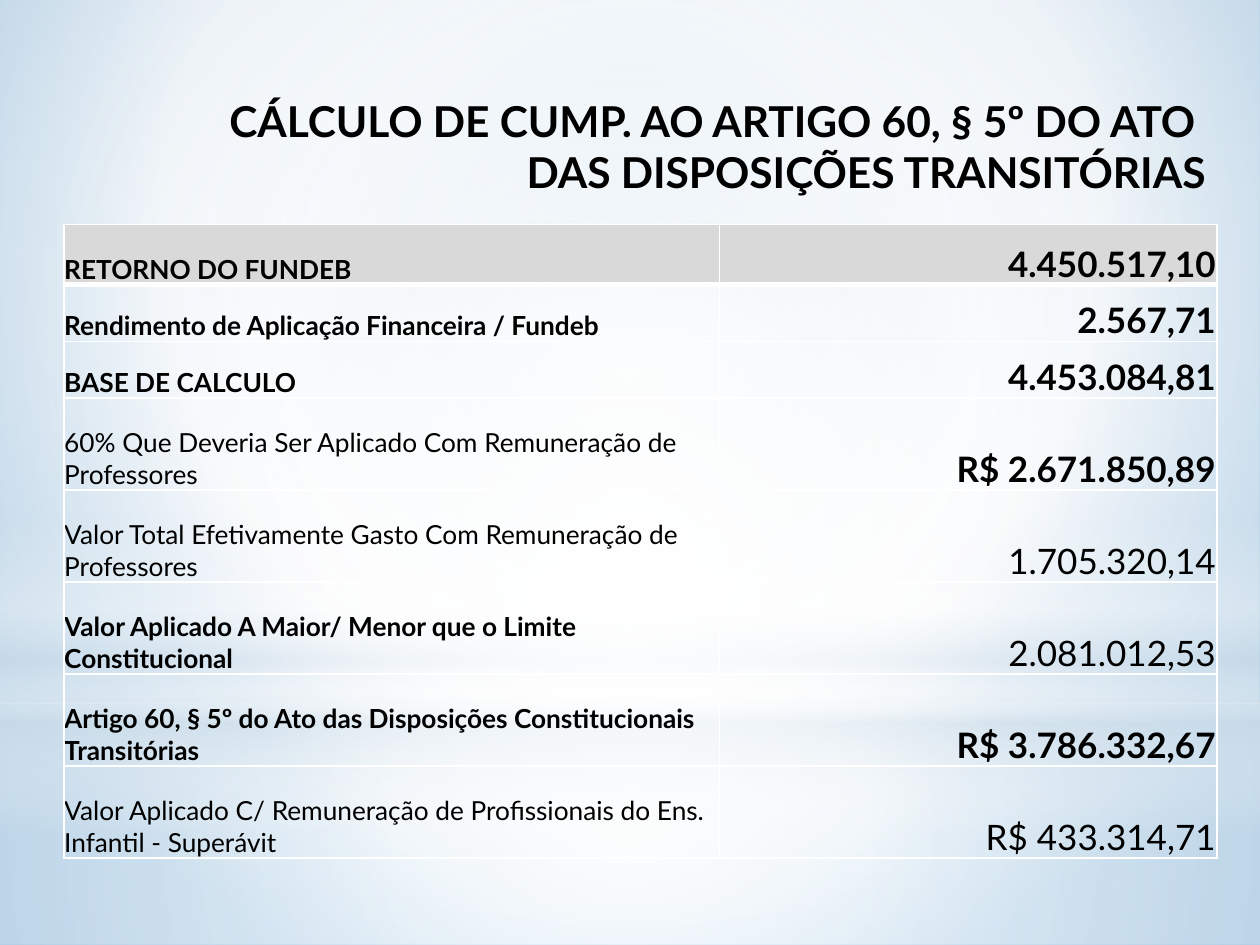
import pptx
import pptx.util
import pptx.dml.color
import pptx.enum.shapes
import pptx.enum.text
import pptx.oxml.ns
from lxml import etree

Inches, Pt = pptx.util.Inches, pptx.util.Pt
qn = pptx.oxml.ns.qn
Align = pptx.enum.text.PP_ALIGN
Anchor = pptx.enum.text.MSO_ANCHOR
Kind = pptx.enum.shapes.MSO_SHAPE

FONT = "Lato"
HUE = {"ink": "000000", "white": "FFFFFF", "head": "D9D9D9", "mist": "CCDDEA",
       "pale": "BCD5E8", "sky": "82B6DE"}

TITLE = ["CÁLCULO DE CUMP. AO ARTIGO 60, § 5º DO ATO ",
         "DAS DISPOSIÇÕES TRANSITÓRIAS"]
ROWS = [
    ("RETORNO DO FUNDEB", True, "4.450.517,10", True, 0.48),
    ("Rendimento de Aplicação Financeira / Fundeb", True, "2.567,71", True, 0.45),
    ("BASE DE CALCULO", True, "4.453.084,81", True, 0.45),
    ("60% Que Deveria Ser Aplicado Com Remuneração de Professores", False,
     "R$ 2.671.850,89", True, 0.73),
    ("Valor Total Efetivamente Gasto Com Remuneração de Professores", False,
     "1.705.320,14", False, 0.73),
    ("Valor Aplicado A Maior/ Menor que o Limite Constitucional", True,
     "2.081.012,53", False, 0.73),
    ("Artigo 60, § 5º do Ato das Disposições Constitucionais Transitórias", True,
     "R$ 3.786.332,67", True, 0.73),
    ("Valor Aplicado C/ Remuneração de Profissionais do Ens. Infantil - Superávit", False,
     "R$ 433.314,71", False, 0.73),
]
COLS = [5.2, 3.95]

MID = (50, 50, 50, 50)
BACK = [(0, "pale", 100), (60, "white", 100), (100, "sky", 100)]
GLOWS = [
    (Kind.RECTANGLE, (0, 5.58, 10, 1.92), MID,
     [(0, "white", 91), (37, "white", 76), (100, "mist", 79)]),
    (Kind.RECTANGLE, (0, 0, 10, 5.58), MID,
     [(0, "white", 89), (48, "white", 62), (100, "mist", 79)]),
    (Kind.RECTANGLE, (0, 4.12, 10, 2.5), None,
     [(0, "white", 0), (29, "white", 30), (45, "mist", 40), (55, "white", 26),
      (65, "mist", 60), (100, "white", 0)]),
    (Kind.OVAL, (0, 1.75, 10, 5.58), MID, [(0, "white", 100), (56, "white", 0)]),
]


def color(name):
    return pptx.dml.color.RGBColor.from_string(HUE[name])


def node(up, tag, **attrs):
    return etree.SubElement(up, qn(tag), {k: str(v) for k, v in attrs.items()})


def paint(fill, up, stops, focus):
    fill.solid()
    grad = etree.Element(qn("a:gradFill"), rotWithShape="1")
    items = node(grad, "a:gsLst")
    for pos, name, alpha in stops:
        stop = node(items, "a:gs", pos=pos * 1000)
        tint = node(stop, "a:srgbClr", val=HUE[name])
        if alpha < 100:
            node(tint, "a:alpha", val=alpha * 1000)
    if focus:
        way = node(grad, "a:path", path="circle")
        node(way, "a:fillToRect", **{k: v * 1000 for k, v in zip("ltrb", focus)})
    else:
        node(grad, "a:lin", ang=90 * 60000, scaled=0)
    up.replace(up.find(qn("a:solidFill")), grad)


def write(para, text, size, bold):
    run = para.add_run()
    run.text = text
    font = run.font
    font.name, font.size, font.bold = FONT, Pt(size), bold
    font.color.rgb = color("ink")


def edge(cell, widths):
    props = cell._tc.get_or_add_tcPr()
    for i, (side, width) in enumerate(zip("LRTB", widths)):
        line = etree.Element(qn("a:ln" + side), w=str(Pt(width)))
        node(node(line, "a:solidFill"), "a:srgbClr", val=HUE["white"])
        props.insert(i, line)


def fill_cell(cell, text, size, bold, align, inset, row):
    cell.vertical_anchor = Anchor.BOTTOM
    cell.margin_left = cell.margin_right = cell.margin_top = Inches(inset)
    cell.margin_bottom = 0
    if row == 0:
        cell.fill.solid()
        cell.fill.fore_color.rgb = color("head")
    else:
        cell.fill.background()
    edge(cell, (1, 1, 3 if row == 1 else 1, 3 if row == 0 else 1))
    para = cell.text_frame.paragraphs[0]
    para.alignment = align
    write(para, text, size, bold)


def add_glows(slide):
    paint(slide.background.fill, slide._element.find(".//" + qn("p:bgPr")),
          BACK, (20, 10, 20, 60))
    for kind, box, focus, stops in GLOWS:
        shape = slide.shapes.add_shape(kind, *map(Inches, box))
        shape.shadow.inherit = False
        shape.line.fill.background()
        paint(shape.fill, shape._element.spPr, stops, focus)


def add_title(slide):
    title = slide.shapes.title
    slide.shapes._spTree.append(title._element)
    title.left, title.top, title.width, title.height = map(Inches, (0.67, 0.36, 9, 1.34))
    frame = title.text_frame
    frame.word_wrap = True
    frame.auto_size = pptx.enum.text.MSO_AUTO_SIZE.NONE
    frame.vertical_anchor = Anchor.BOTTOM
    frame.margin_bottom = Inches(0.14)
    para = frame.paragraphs[0]
    para.alignment = Align.RIGHT
    write(para, TITLE[0], 24.3, True)
    para.add_line_break()
    write(para, TITLE[1], 24.3, True)


def add_grid(slide):
    high = sum(row[-1] for row in ROWS)
    table = slide.shapes.add_table(len(ROWS), len(COLS), Inches(0.51), Inches(1.78),
                                   Inches(sum(COLS)), Inches(high)).table
    for col, width in zip(table.columns, COLS):
        col.width = Inches(width)
    for i, (label, strong, value, bold, tall) in enumerate(ROWS):
        table.rows[i].height = Inches(tall)
        fill_cell(table.cell(i, 0), label, 15, strong, Align.LEFT, 0, i)
        fill_cell(table.cell(i, 1), value, 20, bold, Align.RIGHT, 0.01, i)


def main():
    """Build the slide on the Fundeb calculation."""
    deck = pptx.Presentation()
    deck.slide_width, deck.slide_height = Inches(10), Inches(7.5)
    slide = deck.slides.add_slide(deck.slide_layouts[5])
    add_glows(slide)
    add_title(slide)
    add_grid(slide)
    deck.save("out.pptx")


if __name__ == "__main__":
    main()
